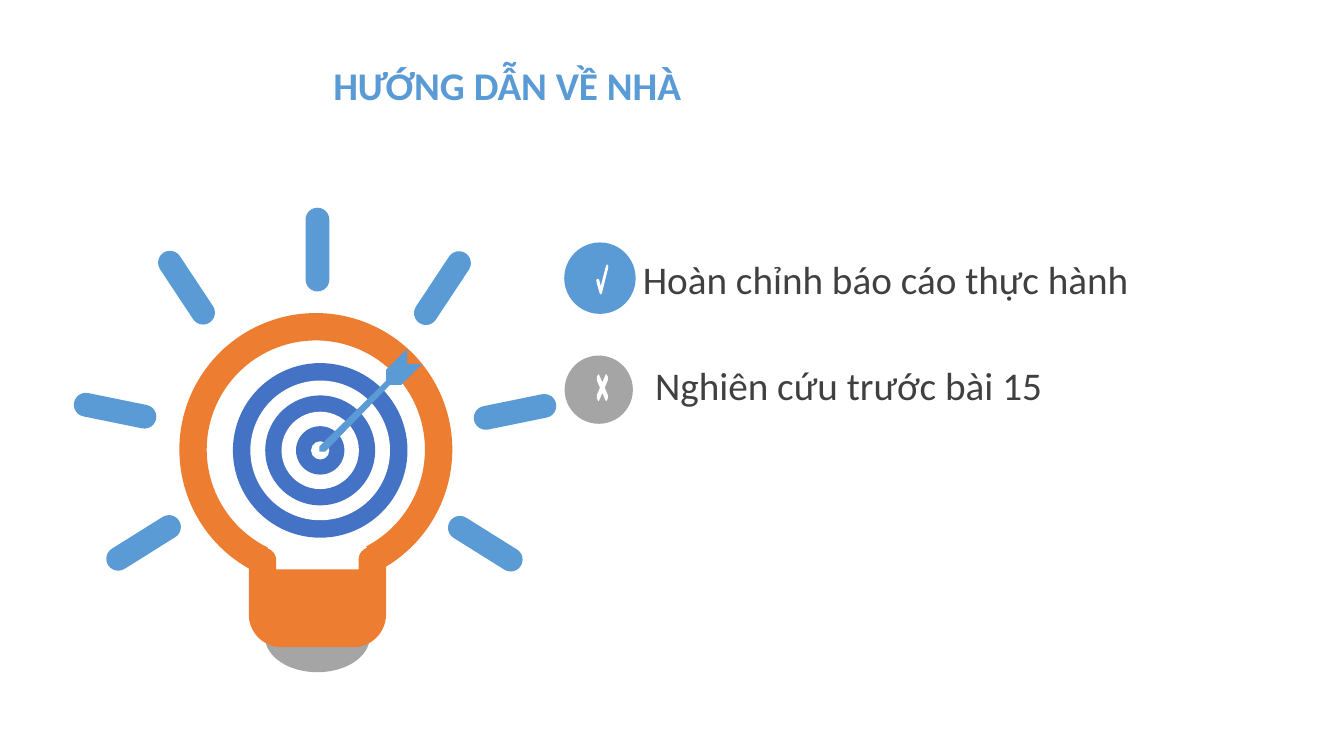
from math import cos, radians, sin

from pptx import Presentation
from pptx import util as u
from pptx.dml.color import RGBColor
from pptx.enum import shapes, text

COLORS = {
    "blue": "5B9BD5",
    "navy": "4472C4",
    "orange": "ED7D31",
    "grey": "A5A5A5",
    "white": "FFFFFF",
    "ink": "404040",
}
BULB_CENTRE = (7.96, 11.33)
TARGET_CENTRE = (8.07, 11.35)
TARGET_RINGS = [4.4, 3.52, 2.77, 1.95, 1.22, 0.46]
# Centre x, centre y and angle of each ray, clockwise from the lower left
RAYS = [
    (3.62, 13.68, -32), (2.9, 10.35, 11.5), (4.7, 7.25, 56.5), (8, 6.29, 90),
    (11.15, 7.26, -56.5), (12.98, 10.38, -11.5), (12.23, 13.7, 32),
]
ARROW = [
    (9.83, 9.7), (10.11, 9.7), (10.64, 9.17), (10.26, 9.17), (10.26, 8.79),
    (9.73, 9.32), (9.73, 9.6), (8.05, 11.25), (8.05, 11.38), (8.2, 11.38),
]
TICK = [
    (15.12, 7.41), (15.04, 7.14), (15.03, 7.05), (15.07, 7.02), (15.1, 7.05),
    (15.14, 7.21), (15.27, 6.71), (15.3, 6.66), (15.33, 6.7), (15.32, 6.78),
    (15.17, 7.39), (15.14, 7.42),
]
CROSS_CENTRE = (15.18, 9.77)
CROSS_QUARTER = [(0.06, 0), (0.14, 0.19), (0.14, 0.27), (0.1, 0.34), (0.08, 0.32), (0, 0.13)]


def paint(shape, color):
    shape.shadow.inherit = False
    shape.fill.solid()
    shape.fill.fore_color.rgb = RGBColor.from_string(COLORS[color])
    shape.line.fill.background()


def arc(centre, radius_x, radius_y, start, end, steps=48):
    """Points along an elliptical arc; angles in degrees, clockwise from the right."""
    angles = [radians(start + (end - start) * step / steps) for step in range(steps + 1)]
    return [(centre[0] + radius_x * cos(a), centre[1] + radius_y * sin(a)) for a in angles]


def add_outline(group, color, *contours):
    """Draw closed contours as one shape; later contours cut holes."""
    builder = None
    for contour in contours:
        points = [(u.Cm(x), u.Cm(y)) for x, y in contour]
        if builder is None:
            builder = group.shapes.build_freeform(*points[0])
        else:
            builder.move_to(*points[0])
        builder.add_line_segments(points[1:], close=True)
    paint(builder.convert_to_shape(), color)


def add_disc(group, centre, diameter, color):
    left, top = (value - diameter / 2 for value in centre)
    disc = group.shapes.add_shape(
        shapes.MSO_SHAPE.OVAL, u.Cm(left), u.Cm(top), u.Cm(diameter), u.Cm(diameter))
    paint(disc, color)


def add_ray(group, x, y, angle, length=2.11, thickness=0.6):
    ray = group.shapes.add_shape(
        shapes.MSO_SHAPE.ROUNDED_RECTANGLE, u.Cm(x - length / 2), u.Cm(y - thickness / 2),
        u.Cm(length), u.Cm(thickness))
    ray.adjustments[0] = 0.5
    ray.rotation = angle
    paint(ray, "blue")


def add_bulb(group):
    outside = (
        arc(BULB_CENTRE, 3.44, 3.44, 119.4, 419, 120)
        + arc((8.9, 15.48), 0.83, 0.83, 0, 90)
        + arc((7.1, 15.48), 0.83, 0.83, 90, 180)
    )
    inside = (
        arc(BULB_CENTRE, 2.75, 2.75, 116, 422.5, 120)
        + arc((9.35, 14.1), 0.31, 0.31, 251, 180)
        + [(9.04, 14.35), (6.96, 14.35)]
        + arc((6.65, 14.12), 0.31, 0.31, 0, -71)
    )
    add_outline(group, "grey", arc((8, 16.05), 1.32, 0.89, 0, 180))
    for ray in RAYS:
        add_ray(group, *ray)
    add_outline(group, "orange", outside, inside)
    for index, diameter in enumerate(TARGET_RINGS):
        add_disc(group, TARGET_CENTRE, diameter, ("navy", "white")[index % 2])
    add_outline(group, "blue", ARROW)


def cross_points():
    """Mirror one quarter of the cross into all four."""
    points = []
    for sign_x, sign_y, step in ((1, 1, 1), (-1, 1, -1), (-1, -1, 1), (1, -1, -1)):
        points += [(CROSS_CENTRE[0] + sign_x * x, CROSS_CENTRE[1] + sign_y * y)
                   for x, y in CROSS_QUARTER[::step]]
    return points


def add_label(parent, words, left, top, width, height, color="ink", bold=None):
    box = parent.shapes.add_textbox(u.Cm(left), u.Cm(top), u.Cm(width), u.Cm(height))
    box.text_frame.word_wrap = False
    box.text_frame.auto_size = text.MSO_AUTO_SIZE.SHAPE_TO_FIT_TEXT
    para = box.text_frame.paragraphs[0]
    para.text = words
    para.font.name = "Calibri"
    para.font.size = u.Pt(28)
    para.font.bold = bold
    para.font.color.rgb = RGBColor.from_string(COLORS[color])
    return para


def add_tasks(group):
    report = add_label(group, "Hoàn chỉnh báo cáo thực hành", 15.95, 6.91, 12.9, 0.97)
    report.line_spacing = u.Pt(16.5)
    report.space_after = u.Pt(15)
    add_disc(group, (15.12, 7.01), 1.8, "blue")
    add_outline(group, "white", TICK)
    add_label(group, "Nghiên cứu trước bài 15", 16.26, 8.97, 11.3, 1.45)
    add_disc(group, (15.09, 9.82), 1.72, "grey")
    add_outline(group, "white", cross_points())


def main():
    deck = Presentation()
    deck.slide_width, deck.slide_height = u.Cm(33.87), u.Cm(19.05)
    page = deck.slides.add_slide(deck.slide_layouts[6])
    add_bulb(page.shapes.add_group_shape())
    add_tasks(page.shapes.add_group_shape())
    add_label(page, "HƯỚNG DẪN VỀ NHÀ", 8.15, 1.42, 10.9, 1.45, "blue", True)
    deck.save("out.pptx")


if __name__ == "__main__":
    main()
